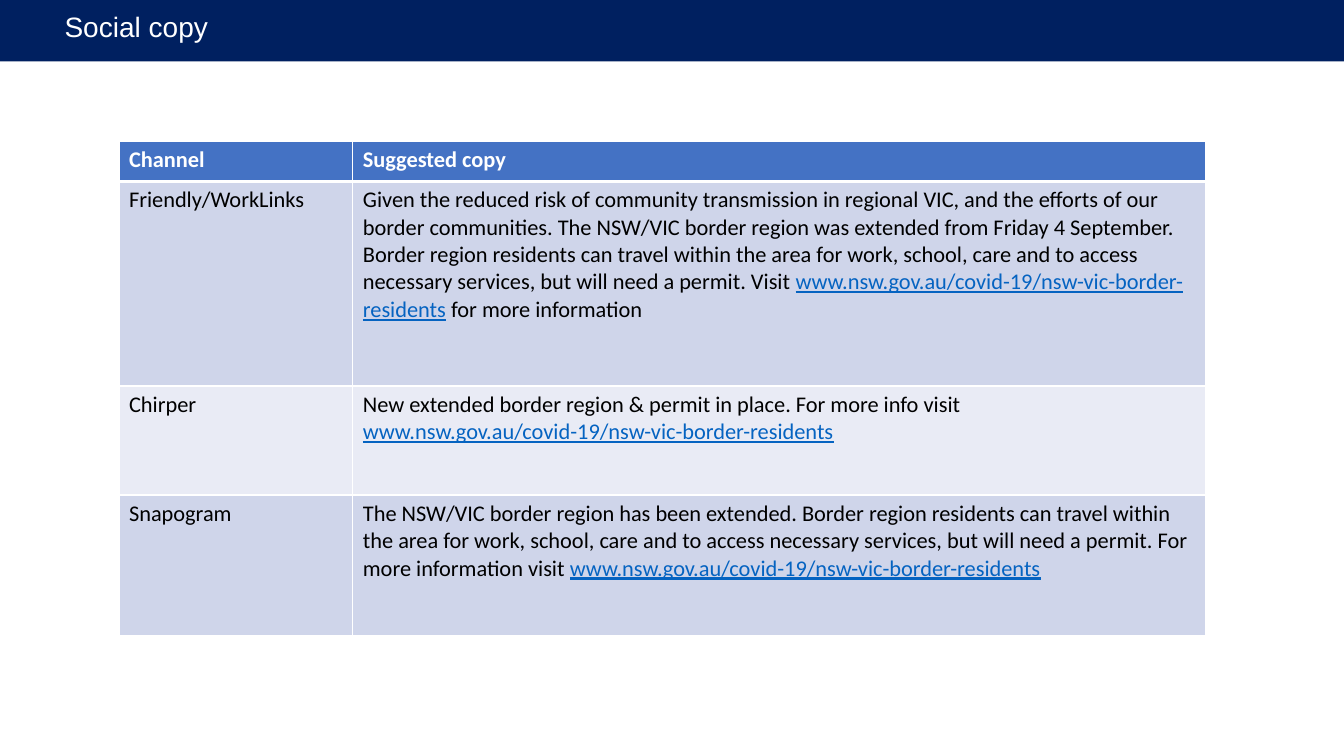
from lxml.etree import SubElement
from pptx import Presentation
from pptx.dml.color import RGBColor
from pptx.enum.text import MSO_ANCHOR, MSO_AUTO_SIZE, PP_ALIGN
from pptx.oxml.ns import qn
from pptx.util import Inches, Pt

NAVY = RGBColor(0x00, 0x20, 0x60)
BLUE = RGBColor(0x44, 0x72, 0xC4)
BAND_DARK = RGBColor(0xCF, 0xD5, 0xEA)
BAND_LIGHT = RGBColor(0xE9, 0xEB, 0xF5)
LINK_BLUE = RGBColor(0x05, 0x63, 0xC1)
WHITE = RGBColor(0xFF, 0xFF, 0xFF)
BLACK = RGBColor(0x00, 0x00, 0x00)

PERMIT_ADDRESS = "www.nsw.gov.au/covid-19/nsw-vic-border-residents"
HEADINGS = ("Channel", "Suggested copy")
POSTS = (
    (
        "Friendly/WorkLinks",
        "Given the reduced risk of community transmission in regional VIC, "
        "and the efforts of our border communities. The NSW/VIC border region "
        "was extended from Friday 4 September. Border region residents can "
        "travel within the area for work, school, care and to access necessary "
        "services, but will need a permit. Visit ",
        " for more information",
    ),
    (
        "Chirper",
        "New extended border region & permit in place. For more info visit ",
        " ",
    ),
    (
        "Snapogram",
        "The NSW/VIC border region has been extended. Border region residents "
        "can travel within the area for work, school, care and to access "
        "necessary services, but will need a permit. For more information visit ",
        " ",
    ),
)
COLUMN_WIDTHS = (2.32, 8.46)
ROW_HEIGHTS = (0.4, 2.03, 1.08, 1.4)


def add_run(paragraph, text, color, size=16, font="Calibri", bold=False, underline=False):
    run = paragraph.add_run()
    run.text = text
    run.font.name = font
    run.font.size = Pt(size)
    run.font.bold = bold
    run.font.underline = underline
    run.font.color.rgb = color


def add_title_bar(slide, text):
    title = slide.shapes.title
    title.left, title.top = Inches(0), Inches(-0.08)
    title.width, title.height = Inches(13.33), Inches(0.69)
    title.fill.solid()
    title.fill.fore_color.rgb = NAVY
    frame = title.text_frame
    frame.auto_size = MSO_AUTO_SIZE.NONE
    frame.vertical_anchor = MSO_ANCHOR.MIDDLE
    frame.margin_left = Inches(0.64)
    paragraph = frame.paragraphs[0]
    paragraph.alignment = PP_ALIGN.LEFT
    add_run(paragraph, text, WHITE, size=20, font="Arial")


def set_borders(cell, top=1, bottom=1):
    properties = cell._tc.get_or_add_tcPr()
    widths = (("a:lnL", 1), ("a:lnR", 1), ("a:lnT", top), ("a:lnB", bottom))
    for position, (tag, width) in enumerate(widths):
        line = SubElement(properties, qn(tag), w=str(Pt(width)))
        fill = SubElement(line, qn("a:solidFill"))
        SubElement(fill, qn("a:srgbClr"), val=str(WHITE))
        properties.insert(position, line)


def style_cell(cell, color, top=1, bottom=1):
    cell.fill.solid()
    cell.fill.fore_color.rgb = color
    set_borders(cell, top, bottom)
    return cell.text_frame.paragraphs[0]


def add_copy_table(slide):
    table = slide.shapes.add_table(
        len(ROW_HEIGHTS), len(COLUMN_WIDTHS),
        Inches(1.18), Inches(1.4), Inches(sum(COLUMN_WIDTHS)), Inches(sum(ROW_HEIGHTS)),
    ).table
    for column, width in zip(table.columns, COLUMN_WIDTHS):
        column.width = Inches(width)
    for row, height in zip(table.rows, ROW_HEIGHTS):
        row.height = Inches(height)

    for column, heading in enumerate(HEADINGS):
        paragraph = style_cell(table.cell(0, column), BLUE, bottom=3)
        add_run(paragraph, heading, WHITE, bold=True)

    for row, (channel, opening, ending) in enumerate(POSTS, start=1):
        band = BAND_DARK if row % 2 else BAND_LIGHT
        top = 3 if row == 1 else 1
        add_run(style_cell(table.cell(row, 0), band, top=top), channel, BLACK)
        paragraph = style_cell(table.cell(row, 1), band, top=top)
        add_run(paragraph, opening, BLACK)
        add_run(paragraph, PERMIT_ADDRESS, LINK_BLUE, underline=True)
        add_run(paragraph, ending, BLACK)


def main():
    presentation = Presentation()
    presentation.slide_width = Inches(13.33)
    presentation.slide_height = Inches(7.5)
    slide = presentation.slides.add_slide(presentation.slide_layouts[5])
    add_title_bar(slide, "Social copy")
    add_copy_table(slide)
    presentation.save("out.pptx")


if __name__ == "__main__":
    main()
